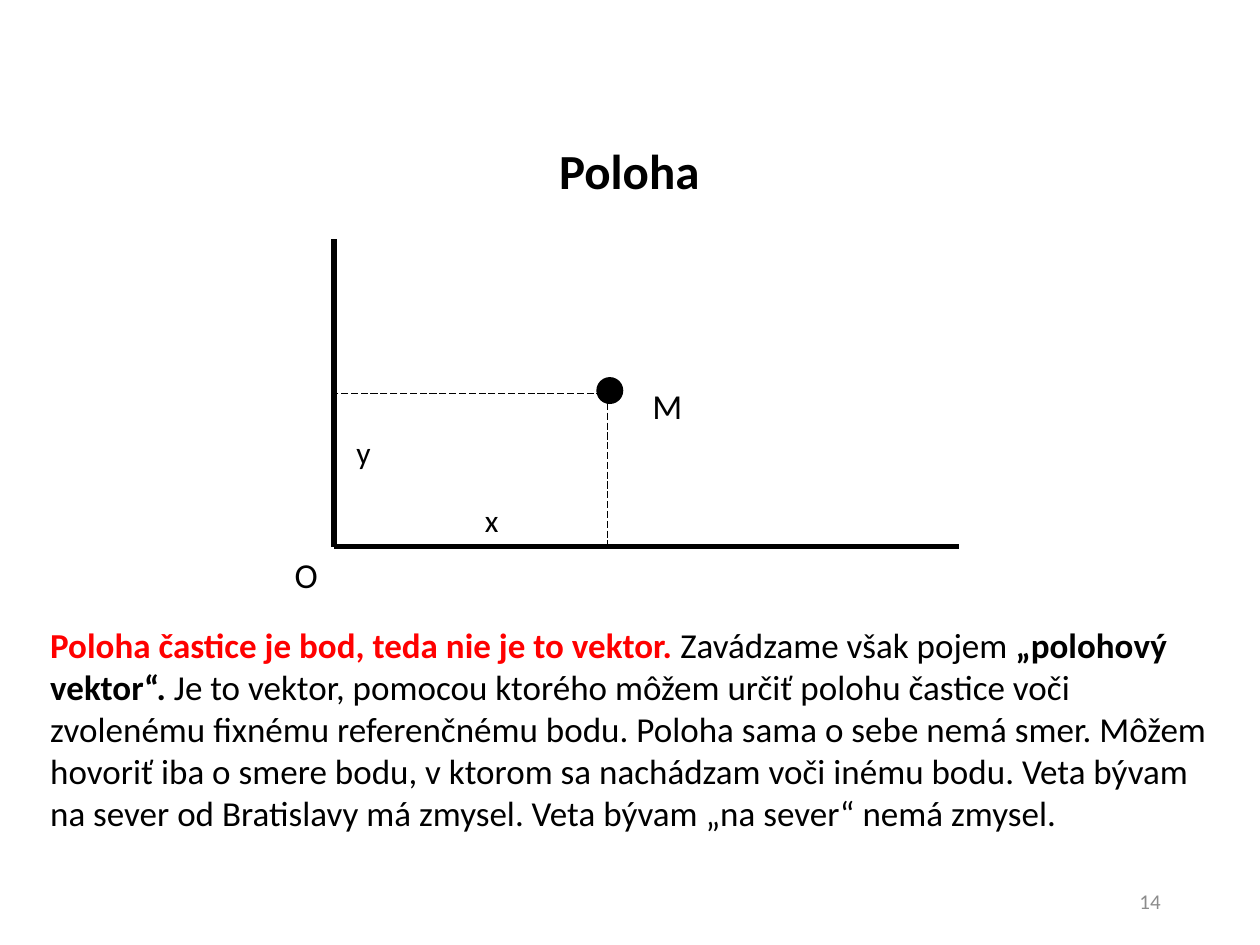
from dataclasses import dataclass

import lxml.etree
import pptx
import pptx.dml.color
import pptx.enum.dml
import pptx.enum.shapes
import pptx.enum.text
import pptx.oxml.ns
import pptx.util

Inches = pptx.util.Inches
Pt = pptx.util.Pt
Align = pptx.enum.text.PP_ALIGN
Anchor = pptx.enum.text.MSO_ANCHOR


@dataclass(frozen=True)
class Theme:
    font: str = "Calibri"
    ink: str = "000000"
    accent: str = "FF0000"
    muted: str = "8C8C8C"
    title: int = 28
    body: int = 20
    coordinate: int = 18
    footer: int = 12
    axis: float = 3
    guide: float = 0.5


THEME = Theme()


def rgb(value):
    return pptx.dml.color.RGBColor.from_string(value)


def add_text(slide, box, runs, size, color=THEME.ink, bold=None,
             align=Align.LEFT, anchor=Anchor.TOP):
    """Add one paragraph; runs are (text, bold, colour), None meaning inherit."""
    frame = slide.shapes.add_textbox(*map(Inches, box)).text_frame
    frame.word_wrap = True
    frame.vertical_anchor = anchor
    paragraph = frame.paragraphs[0]
    paragraph.alignment = align
    paragraph.font.name = THEME.font
    paragraph.font.size = Pt(size)
    paragraph.font.bold = bold
    paragraph.font.color.rgb = rgb(color)
    for text, run_bold, run_color in runs:
        run = paragraph.add_run()
        run.text = text
        if run_bold is not None:
            run.font.bold = run_bold
        if run_color:
            run.font.color.rgb = rgb(run_color)


def add_label(slide, box, text, size, **style):
    add_text(slide, box, [(text, None, None)], size, **style)


def add_line(slide, start, end, width, dash=None):
    line = slide.shapes.add_connector(
        pptx.enum.shapes.MSO_CONNECTOR.STRAIGHT, *map(Inches, (*start, *end)))
    line.line.color.rgb = rgb(THEME.ink)
    line.line.width = Pt(width)
    if dash:
        line.line.dash_style = dash
    properties = line._element.spPr
    lxml.etree.SubElement(properties, pptx.oxml.ns.qn("a:effectLst"))


def add_point(slide, left, top, diameter):
    point = slide.shapes.add_shape(
        pptx.enum.shapes.MSO_SHAPE.OVAL,
        *map(Inches, (left, top, diameter, diameter)))
    point.shadow.inherit = False
    point.fill.solid()
    point.fill.fore_color.rgb = rgb(THEME.ink)
    point.line.color.rgb = rgb(THEME.ink)
    point.line.width = Pt(1)


def add_coordinate_system(slide):
    origin_x, origin_y = 2.65, 4.34
    point_x, point_y = 4.82, 3.12
    origin = (origin_x, origin_y)

    # Axes
    add_line(slide, (origin_x, 1.9), origin, THEME.axis)
    add_line(slide, origin, (7.61, origin_y), THEME.axis)

    # Projections of the particle onto the axes
    dash = pptx.enum.dml.MSO_LINE.LONG_DASH
    for start, end in (
        ((point_x, point_y), (point_x, origin_y)),
        ((point_x - 0.03, point_y), (origin_x, point_y)),
    ):
        add_line(slide, start, end, THEME.guide, dash)
    add_point(slide, 4.74, 3, 0.2)

    # Labels
    for text, box, size in (
        ("x", (3.75, 3.93, 0.39, 0.4), THEME.coordinate),
        ("y", (2.73, 3.39, 0.39, 0.4), THEME.coordinate),
        ("M", (5.08, 3, 0.47, 0.44), THEME.body),
        ("O", (2.24, origin_y, 0.41, 0.44), THEME.body),
    ):
        add_label(slide, box, text, size)


def main():
    deck = pptx.Presentation()
    deck.slide_width = Inches(10)
    deck.slide_height = Inches(7.5)
    slide = deck.slides.add_slide(deck.slide_layouts[6])

    # Title
    add_label(slide, (0.98, 1.07, 8.03, 0.57), "Poloha", THEME.title,
              bold=True, align=Align.CENTER)

    add_coordinate_system(slide)

    # Explanation
    explanation = [
        ("Poloha častice je bod, teda nie je to vektor. ", True, THEME.accent),
        ("Zavádzame však pojem ", None, None),
        ("„polohový vektor“. ", True, None),
        ("Je to vektor, pomocou ktorého môžem určiť polohu častice voči "
         "zvolenému fixnému referenčnému bodu. Poloha sama o sebe nemá smer. "
         "Môžem hovoriť iba o smere bodu, v ktorom sa nachádzam voči inému "
         "bodu. Veta bývam na sever od Bratislavy má zmysel. "
         "Veta bývam „na sever“ nemá zmysel.", None, None),
    ]
    add_text(slide, (0.3, 4.9, 9.4, 1.78), explanation, THEME.body)

    # Slide number
    add_label(slide, (7.06, 6.95, 2.25, 0.4), "14", THEME.footer,
              color=THEME.muted, align=Align.RIGHT, anchor=Anchor.MIDDLE)

    deck.save("out.pptx")


if __name__ == "__main__":
    main()
